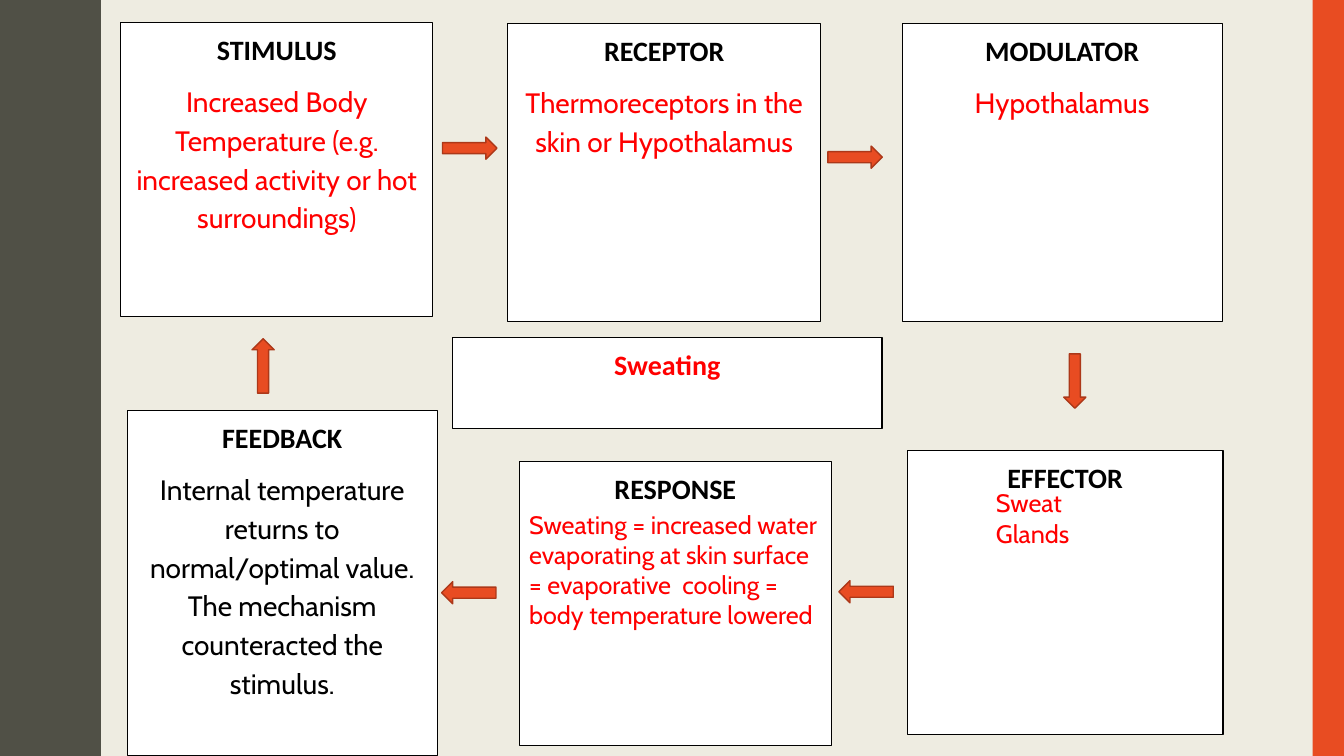
"""Build a feedback loop slide showing how the body responds to heat."""
import math

import pptx
import pptx.dml.color
import pptx.enum.shapes
import pptx.enum.text
import pptx.util

WIDTH, HEIGHT = 13.33, 7.5
CREAM, DARK, ORANGE, RUST = "EEECE1", "505046", "E84C22", "AC3819"
BLACK, WHITE, RED = "000000", "FFFFFF", "FF0000"

# Places and sizes are percentages of the slide's width and height.
BOXES = [
    ((9, 2.93, 23.2, 38.93), [
        ("STIMULUS", "Calibri", BLACK, True),
        ("Increased Body Temperature (e.g. increased activity or hot surroundings)", "Cabin", RED, False)]),
    ((37.8, 3.07, 23.25, 39.47), [
        ("RECEPTOR", "Calibri", BLACK, True),
        ("Thermoreceptors in the skin or Hypothalamus", "Cabin", RED, False)]),
    ((67.13, 3.07, 23.8, 39.47), [
        ("MODULATOR", "Calibri", BLACK, True),
        ("Hypothalamus", "Cabin", RED, False)]),
    ((67.5, 59.6, 23.5, 37.6), [("EFFECTOR", "Calibri", BLACK, True)]),
    ((38.63, 61.07, 23.25, 37.6), [("RESPONSE", "Calibri", BLACK, True)]),
    ((9.45, 54.27, 23.1, 45.73), [
        ("FEEDBACK", "Calibri", BLACK, True),
        ("Internal temperature returns to normal/optimal value. The mechanism counteracted the stimulus.",
         "Cabin", BLACK, False)]),
    ((33.68, 44.67, 31.95, 12), [("Sweating", "Calibri", RED, True)]),
]
ARROW_SIZE = (4.05, 2.93)
ARROWS = [
    (34.95, 19.6, 0), (63.62, 20.8, 0), (79.97, 50.4, 90),
    (64.44, 78.27, 180), (34.88, 78.4, 180), (19.58, 48.4, 270),
]
NOTES = [
    ((73.37, 63.87, 11.6, 9.5), "Sweat Glands"),
    ((38.63, 66.67, 23.1, 17.47),
     "Sweating = increased water evaporating at skin surface = evaporative  cooling = body temperature lowered"),
]
WAVE_MIDDLE, WAVE_SWING, WAVE_COUNT, WAVE_STEPS = 6.56, 0.73, 5, 24


def color(value):
    return pptx.dml.color.RGBColor.from_string(value)


def place(left, top, width, height):
    return [pptx.util.Inches(share / 100 * side)
            for share, side in zip((left, top, width, height), (WIDTH, HEIGHT) * 2)]


def paint(shape, fill, line=None, weight=0.75):
    shape.shadow.inherit = False
    shape.fill.solid()
    shape.fill.fore_color.rgb = color(fill)
    if line:
        shape.line.color.rgb = color(line)
        shape.line.width = pptx.util.Pt(weight)
    else:
        shape.line.fill.background()


def write(paragraph, text, font, size, ink, bold=False):
    paragraph.text = text
    for run in paragraph.runs:
        run.font.name = font
        run.font.size = pptx.util.Pt(size)
        run.font.bold = bold
        run.font.color.rgb = color(ink)


def add_preset(slide, kind, frame, fill, line=None, weight=0.75):
    shape = slide.shapes.add_shape(kind, *place(*frame))
    paint(shape, fill, line, weight)
    return shape


def add_wave(slide):
    count = WAVE_COUNT * WAVE_STEPS
    edge = []
    for step in range(count + 1):
        across = WAVE_MIDDLE - WAVE_SWING * math.cos(2 * math.pi * step / WAVE_STEPS)
        edge.append((across / 100 * WIDTH, step / count * HEIGHT))
    builder = slide.shapes.build_freeform(0, 0, scale=pptx.util.Inches(1))
    builder.add_line_segments(edge + [(0, HEIGHT)], close=True)
    paint(builder.convert_to_shape(), DARK)


def add_box(slide, frame, lines):
    box = add_preset(slide, pptx.enum.shapes.MSO_SHAPE.RECTANGLE, frame, WHITE, BLACK)
    text_frame = box.text_frame
    text_frame.word_wrap = True
    text_frame.vertical_anchor = pptx.enum.text.MSO_ANCHOR.TOP
    for index, (text, font, ink, bold) in enumerate(lines):
        paragraph = text_frame.add_paragraph() if index else text_frame.paragraphs[0]
        write(paragraph, text, font, 20, ink, bold)
        paragraph.alignment = pptx.enum.text.PP_ALIGN.CENTER
        paragraph.line_spacing = 1.15
        paragraph.space_after = pptx.util.Pt(10)


def main():
    presentation = pptx.Presentation()
    presentation.slide_width = pptx.util.Inches(WIDTH)
    presentation.slide_height = pptx.util.Inches(HEIGHT)
    slide = presentation.slides.add_slide(presentation.slide_layouts[6])
    slide.background.fill.solid()
    slide.background.fill.fore_color.rgb = color(CREAM)

    add_wave(slide)
    add_preset(slide, pptx.enum.shapes.MSO_SHAPE.RECTANGLE, (97.67, 0, 2.33, 100), ORANGE)
    for frame, lines in BOXES:
        add_box(slide, frame, lines)
    width, height = ARROW_SIZE
    for center, middle, rotation in ARROWS:
        frame = (center - width / 2, middle - height / 2, width, height)
        arrow = add_preset(slide, pptx.enum.shapes.MSO_SHAPE.RIGHT_ARROW, frame, ORANGE, RUST, 1)
        arrow.rotation = rotation
    for frame, text in NOTES:
        note = slide.shapes.add_textbox(*place(*frame))
        note.text_frame.word_wrap = True
        write(note.text_frame.paragraphs[0], text, "Cabin", 18, RED)

    presentation.save("out.pptx")


if __name__ == "__main__":
    main()
